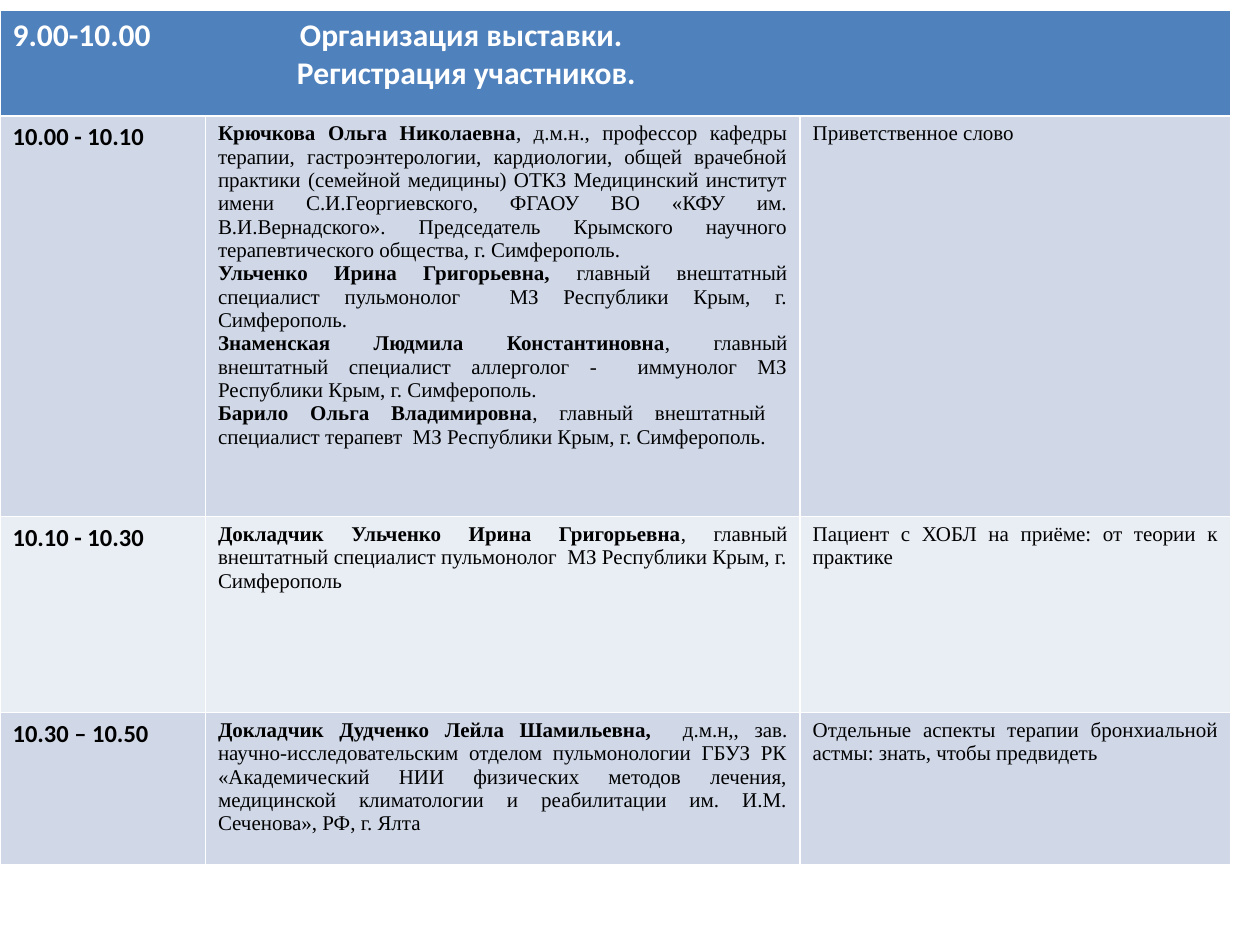
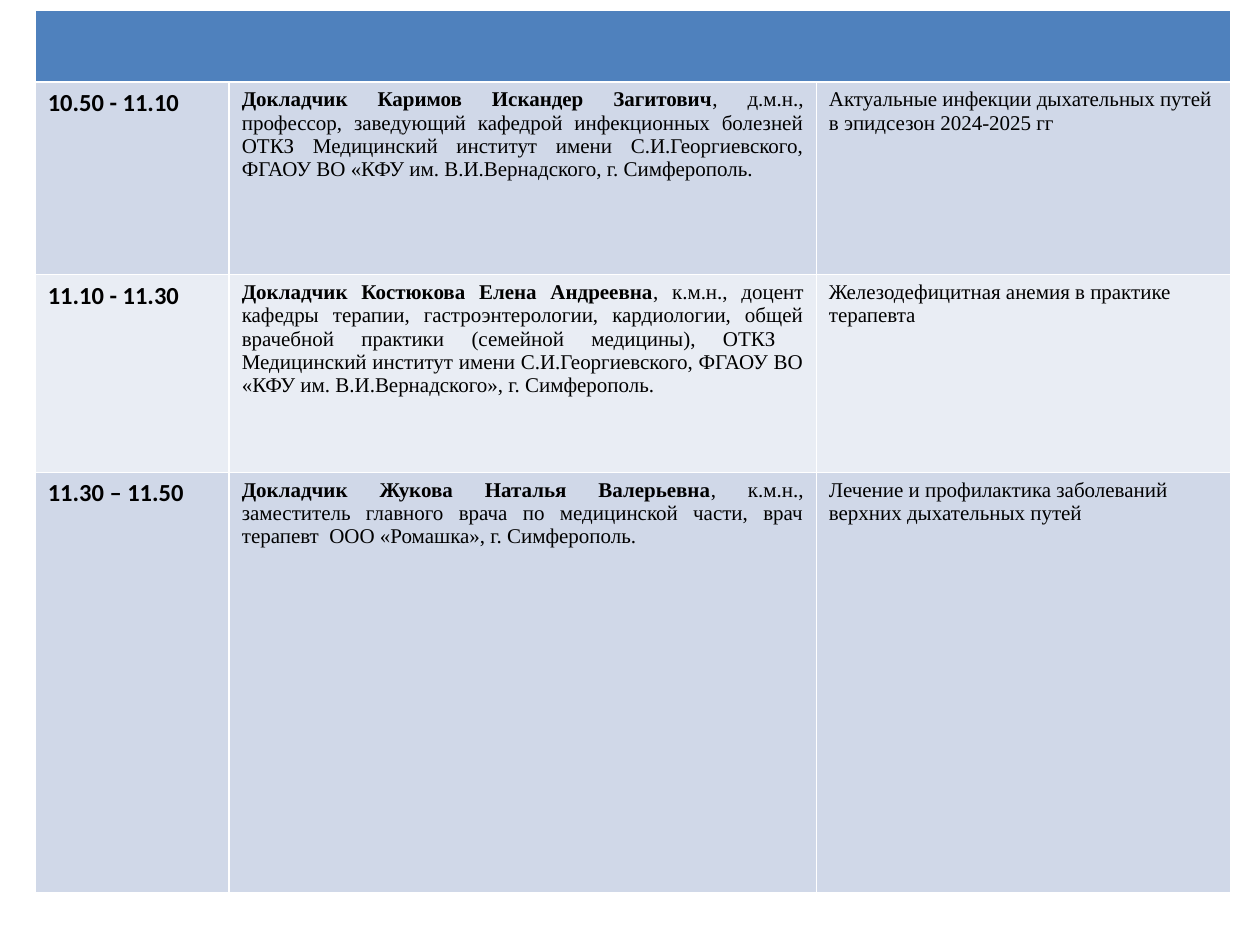
"""Build two programme slides of a medical conference, each with a timetable."""
from lxml.etree import SubElement
from pptx import Presentation
from pptx.dml.color import RGBColor
from pptx.enum.text import PP_ALIGN as Align
from pptx.oxml.ns import qn
from pptx.util import Pt

COLORS = {
    "header": "4F81BD",
    "header_text": "FFFFFF",
    "odd_row": "D0D8E8",
    "even_row": "E9EDF4",
    "text": "000000",
}
TABLE_TOP = 5.76
TABLE_RIGHT = 703.4
HEADING_TAB = 164.2
HEADING_INDENT = 162.5

timetables = [
    {
        "columns": [117.4, 339.8, 246.2],
        "rows": [60.5, 229, 112, 87],
        "topic_align": Align.JUSTIFY,
        "heading": ["9.00-10.00\tОрганизация выставки.", "Регистрация участников."],
        "sessions": [
            ("10.00 - 10.10", [
                ("Крючкова Ольга Николаевна",
                 ", д.м.н., профессор кафедры терапии, гастроэнтерологии, кардиологии, общей "
                 "врачебной практики (семейной медицины) ОТКЗ Медицинский институт имени "
                 "С.И.Георгиевского, ФГАОУ ВО «КФУ им. В.И.Вернадского». Председатель Крымского "
                 "научного терапевтического общества, г. Симферополь."),
                ("Ульченко Ирина Григорьевна,",
                 " главный внештатный специалист пульмонолог  МЗ Республики Крым, г. Симферополь."),
                ("Знаменская Людмила Константиновна",
                 ", главный внештатный специалист аллерголог -  иммунолог МЗ Республики Крым, "
                 "г. Симферополь."),
                ("Барило Ольга Владимировна",
                 ", главный внештатный  специалист терапевт  МЗ Республики Крым, г. Симферополь."),
            ], "Приветственное слово"),
            ("10.10 - 10.30", [
                ("Докладчик Ульченко Ирина Григорьевна",
                 ", главный внештатный специалист пульмонолог  МЗ Республики Крым, г. Симферополь"),
            ], "Пациент с ХОБЛ на приёме: от теории к практике"),
            ("10.30 – 10.50", [
                ("Докладчик Дудченко Лейла Шамильевна,  ",
                 "д.м.н,, зав. научно-исследовательским отделом пульмонологии ГБУЗ РК "
                 "«Академический НИИ физических методов лечения, медицинской климатологии и "
                 "реабилитации им. И.М. Сеченова», РФ, г. Ялта"),
            ], "Отдельные аспекты терапии бронхиальной астмы: знать, чтобы предвидеть"),
        ],
    },
    {
        "columns": [110.9, 335.5, 236.9],
        "rows": [41, 110.2, 113, 240.5],
        "topic_align": Align.LEFT,
        "heading": [],
        "sessions": [
            ("10.50 - 11.10", [
                ("Докладчик Каримов Искандер Загитович",
                 ", д.м.н., профессор, заведующий кафедрой инфекционных болезней ОТКЗ Медицинский "
                 "институт имени С.И.Георгиевского, ФГАОУ ВО «КФУ им. В.И.Вернадского, "
                 "г. Симферополь."),
            ], "Актуальные инфекции дыхательных путей в эпидсезон 2024-2025 гг"),
            ("11.10 - 11.30", [
                ("Докладчик Костюкова Елена Андреевна",
                 ", к.м.н., доцент кафедры терапии, гастроэнтерологии, кардиологии, общей врачебной "
                 "практики (семейной медицины), ОТКЗ  Медицинский институт имени "
                 "С.И.Георгиевского, ФГАОУ ВО «КФУ им. В.И.Вернадского», г. Симферополь."),
            ], "Железодефицитная анемия в практике терапевта"),
            ("11.30 – 11.50", [
                ("Докладчик Жукова Наталья Валерьевна",
                 ", к.м.н., заместитель главного врача по медицинской части, врач терапевт  "
                 "ООО «Ромашка», г. Симферополь."),
            ], "Лечение и профилактика заболеваний верхних дыхательных путей"),
        ],
    },
]


def add_text(cell, index, text, font="Times New Roman", size=12, bold=False,
             color="text", align=Align.LEFT):
    """Append a run to the cell's paragraph with this index, adding it if needed."""
    frame = cell.text_frame
    if index == len(frame.paragraphs):
        frame.add_paragraph()
    paragraph = frame.paragraphs[index]
    paragraph.alignment = align
    run = paragraph.add_run()
    run.text = text
    run.font.name = font
    run.font.size = Pt(size)
    run.font.bold = bold
    run.font.color.rgb = RGBColor.from_string(COLORS[color])
    return paragraph


def fill_cell(cell, color):
    """Give the cell a solid fill from the palette."""
    cell.fill.solid()
    cell.fill.fore_color.rgb = RGBColor.from_string(COLORS[color])


presentation = Presentation()
presentation.slide_width = Pt(720)
presentation.slide_height = Pt(540)

for timetable in timetables:
    slide = presentation.slides.add_slide(presentation.slide_layouts[6])
    columns, rows = timetable["columns"], timetable["rows"]
    width = sum(columns)
    table = slide.shapes.add_table(
        len(rows), len(columns), Pt(TABLE_RIGHT - width), Pt(TABLE_TOP), Pt(width), Pt(sum(rows))
    ).table
    for column, column_width in zip(table.columns, columns):
        column.width = Pt(column_width)
    for row, row_height in zip(table.rows, rows):
        row.height = Pt(row_height)

    header = table.cell(0, 0)
    header.merge(table.cell(0, len(columns) - 1))
    fill_cell(header, "header")
    for index, line in enumerate(timetable["heading"]):
        paragraph = add_text(header, index, line, font="Calibri", size=18, bold=True,
                             color="header_text")
        properties = paragraph._p.get_or_add_pPr()
        if "\t" in line:
            tabs = SubElement(properties, qn("a:tabLst"))
            SubElement(tabs, qn("a:tab"), pos=str(Pt(HEADING_TAB)), algn="l")
        else:
            properties.set("marL", str(Pt(HEADING_INDENT)))
            properties.set("indent", "0")

    for number, (time, speakers, topic) in enumerate(timetable["sessions"], 1):
        time_cell, speaker_cell, topic_cell = table.rows[number].cells
        for cell in (time_cell, speaker_cell, topic_cell):
            fill_cell(cell, "odd_row" if number % 2 else "even_row")
        add_text(time_cell, 0, time, font="Calibri", size=14, bold=True)
        for index, (name, position) in enumerate(speakers):
            add_text(speaker_cell, index, name, bold=True, align=Align.JUSTIFY)
            add_text(speaker_cell, index, position, align=Align.JUSTIFY)
        add_text(topic_cell, 0, topic, align=timetable["topic_align"])

presentation.save("out.pptx")
